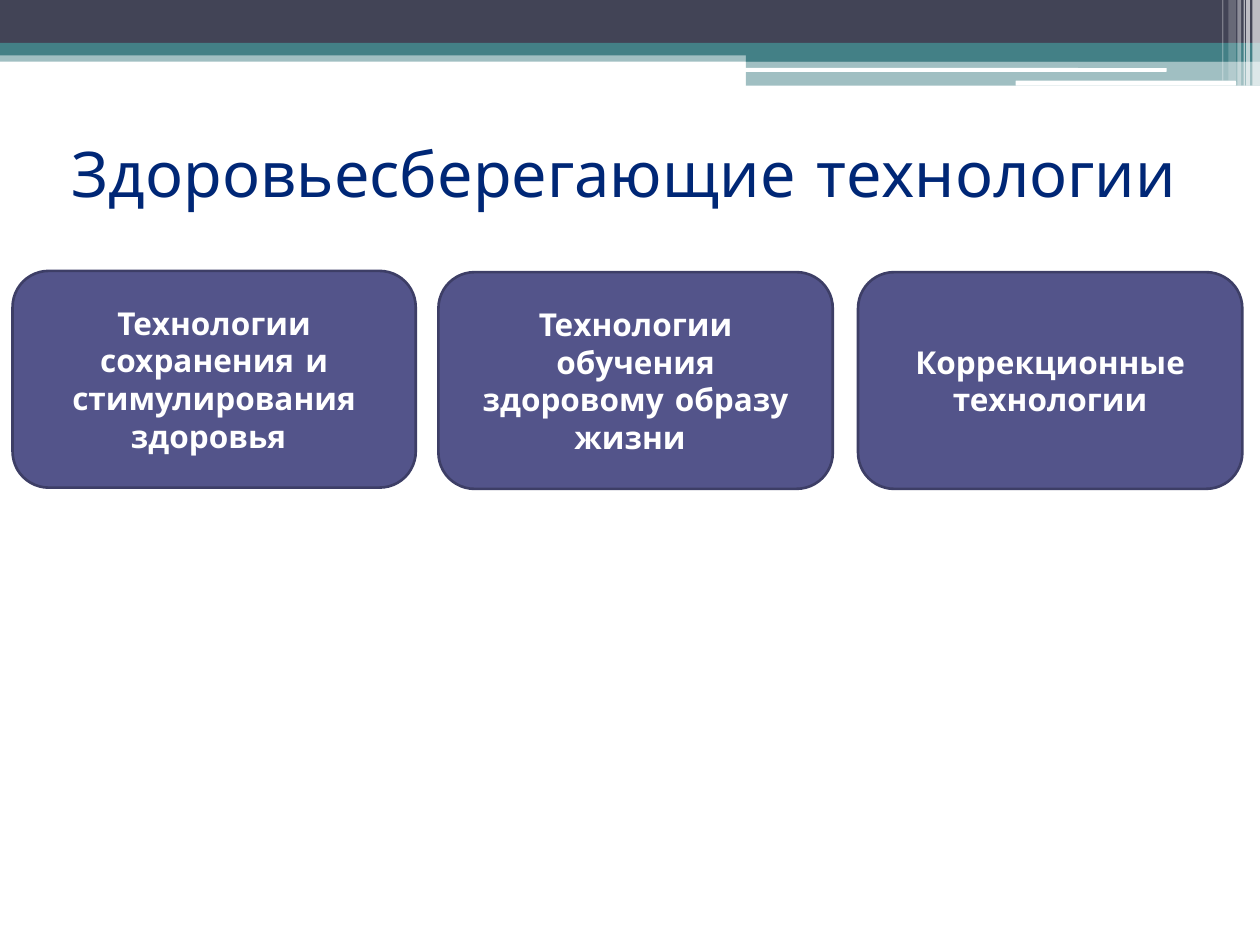
"""Build a slide with a banded header, a title and three technology cards."""
from dataclasses import dataclass
from typing import Any

from lxml import etree
from pptx import Presentation, util as u
from pptx.dml import color as c
from pptx.enum import shapes, text
from pptx.oxml import ns

COLUMNS, ROWS = 1000, 750
FONT = "Comic Neue"
COLORS = {"dark": "424456", "teal": "438086", "white": "FFFFFF",
          "title": "002776", "card": "53548A", "edge": "3D3E66"}
KINDS = shapes.MSO_SHAPE


@dataclass
class Box:
    """A rectangle measured in grid columns and rows."""
    col: int
    row: int
    cols: int
    rows: int


@dataclass
class Band:
    """A header shape with its fill and opacity in percent."""
    box: Box
    color: str
    opacity: int = 100
    kind: Any = KINDS.RECTANGLE


@dataclass
class Card:
    """A rounded card with its caption."""
    box: Box
    caption: str


STRIPES = [(994, 6, 68, 65), (989, 3, 68, 65), (987, 1, 68, 60),
           (982, 3, 68, 40), (975, 6, 64, 20), (970, 1, 64, 30)]
BANDS = [
    Band(Box(0, 40, COLUMNS, 9), "teal", 50),
    Band(Box(0, 0, COLUMNS, 34), "dark"),
    Band(Box(0, 34, COLUMNS, 10), "teal"),
    Band(Box(592, 39, 408, 10), "teal"),
    Band(Box(592, 48, 408, 20), "teal", 50),
    Band(Box(591, 54, 335, 3), "white", kind=KINDS.ROUNDED_RECTANGLE),
    Band(Box(806, 64, 175, 4), "white", kind=KINDS.ROUNDED_RECTANGLE),
    *(Band(Box(col, 0, cols, rows), "white", opacity)
      for col, cols, rows, opacity in STRIPES),
]
TITLE = "Здоровьесберегающие технологии"
TITLE_BOX = Box(47, 78, 900, 117)
CARDS = [
    Card(Box(10, 215, 320, 172), "Технологии сохранения и стимулирования здоровья "),
    Card(Box(348, 216, 313, 172), "Технологии обучения здоровому образу жизни "),
    Card(Box(681, 216, 305, 172), "Коррекционные технологии"),
]


def rgb(name: str) -> c.RGBColor:
    """Look up a named colour."""
    return c.RGBColor.from_string(COLORS[name])


def place(prs: Any, box: Box) -> dict[str, int]:
    """Convert a grid box to slide lengths."""
    x, y = prs.slide_width / COLUMNS, prs.slide_height / ROWS
    return {"left": round(box.col * x), "top": round(box.row * y),
            "width": round(box.cols * x), "height": round(box.rows * y)}


def apply(target: Any, values: dict[str, Any]) -> None:
    """Set every attribute in a dict of format values."""
    for name, value in values.items():
        setattr(target, name, value)


def add_shape(s: Any, prs: Any, kind: Any, box: Box, color: str) -> Any:
    """Add a flat filled shape without outline or shadow."""
    sp = s.shapes.add_shape(kind, **place(prs, box))
    sp.shadow.inherit = False
    sp.fill.solid()
    sp.fill.fore_color.rgb = rgb(color)
    sp.line.fill.background()
    return sp


def add_band(s: Any, prs: Any, band: Band) -> None:
    """Draw one header band, translucent where asked."""
    sp = add_shape(s, prs, band.kind, band.box, band.color)
    if band.opacity < 100:
        fill = sp.fill._xPr.find(".//" + ns.qn("a:srgbClr"))
        etree.SubElement(fill, ns.qn("a:alpha"), val=str(band.opacity * 1000))


def write(sp: Any, words: str, align: Any, color: str, font: dict[str, Any]) -> None:
    """Write one formatted, vertically centred paragraph."""
    tf = sp.text_frame
    apply(tf, {"word_wrap": True, "auto_size": text.MSO_AUTO_SIZE.NONE,
               "vertical_anchor": text.MSO_ANCHOR.MIDDLE})
    p = tf.paragraphs[0]
    p.alignment = align
    r = p.add_run()
    r.text = words
    apply(r.font, {"name": FONT, **font})
    r.font.color.rgb = rgb(color)


def add_card(s: Any, prs: Any, card: Card) -> None:
    """Draw one outlined card with a bold caption."""
    sp = add_shape(s, prs, KINDS.ROUNDED_RECTANGLE, card.box, "card")
    sp.line.color.rgb = rgb("edge")
    sp.line.width = u.Pt(1.5)
    write(sp, card.caption, text.PP_ALIGN.CENTER, "white",
          {"size": u.Pt(18), "bold": True})


def main() -> None:
    """Assemble and save the slide."""
    prs = Presentation()
    apply(prs, {"slide_width": u.Inches(10), "slide_height": u.Inches(7.5)})
    s = prs.slides.add_slide(prs.slide_layouts[5])
    for band in BANDS:
        add_band(s, prs, band)
    title = s.shapes.title
    apply(title, place(prs, TITLE_BOX))
    write(title, TITLE, text.PP_ALIGN.LEFT, "title", {"size": u.Pt(36)})
    for card in CARDS:
        add_card(s, prs, card)
    prs.save("out.pptx")


if __name__ == "__main__":
    main()
